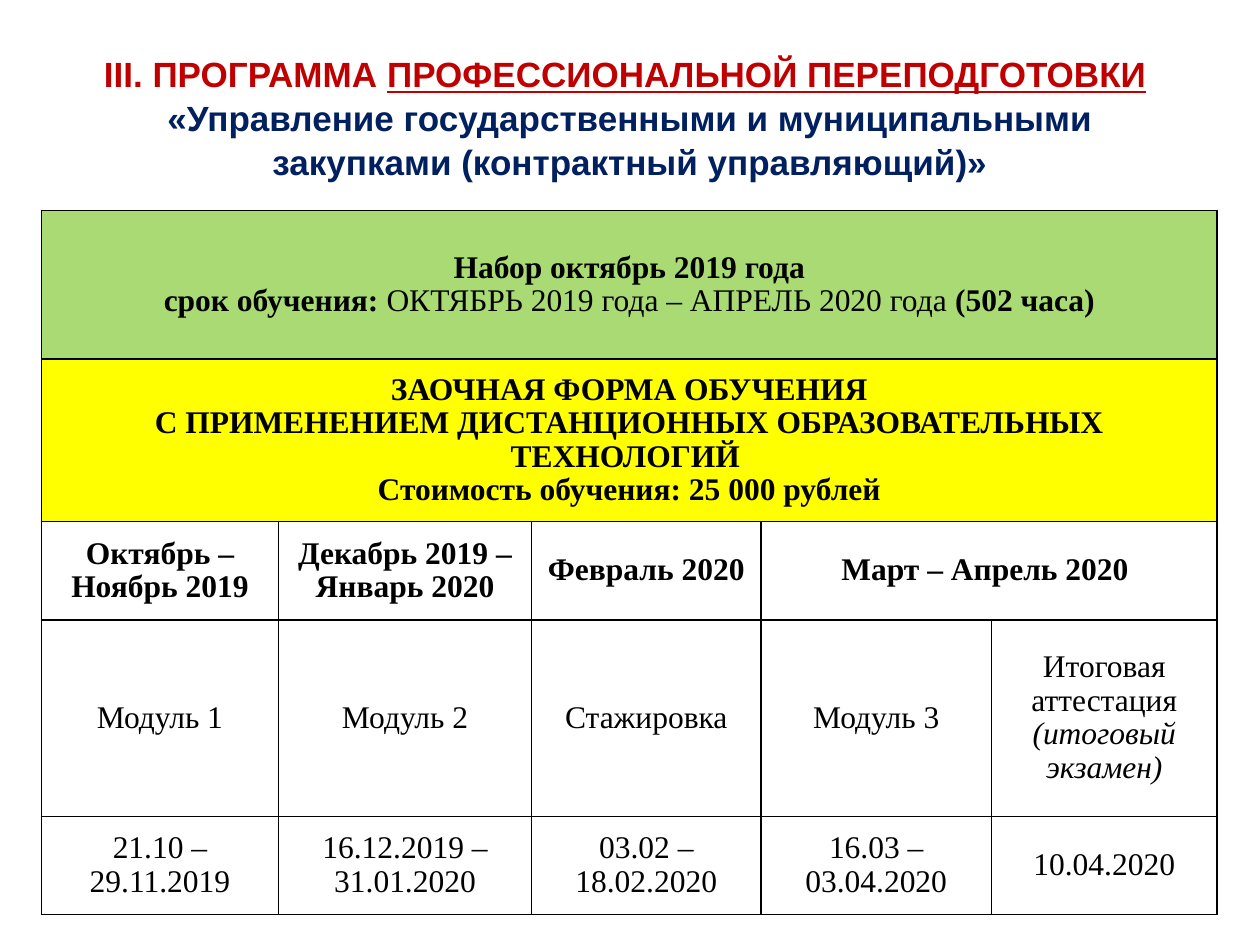
"""Build a slide with the schedule of a professional retraining programme."""
import lxml.etree
import pptx
import pptx.dml.color
import pptx.enum.text
import pptx.oxml.ns
import pptx.util

Inches = pptx.util.Inches
Pt = pptx.util.Pt

THEME = {
    "title": {"name": "Arial", "size": Pt(20), "bold": True},
    "table": {"name": "Times New Roman", "size": Pt(18)},
    "red": "C00000",
    "navy": "002060",
    "black": "000000",
    "green": "A9DA74",
    "yellow": "FFFF00",
    "border": Pt(1),
    "title_spacing": 1.04,
    "table_spacing": 0.96,
}
BOLD = {"bold": True}
PLAIN = {"bold": False}
ITALIC = {"bold": False, "italic": True}

TITLE = [
    ("III. ПРОГРАММА ", "red", {}),
    ("ПРОФЕССИОНАЛЬНОЙ ПЕРЕПОДГОТОВКИ", "red", {"underline": True}),
    (" ", "red", {}),
    None,
    ("«Управление государственными и муниципальными закупками "
     "(контрактный управляющий)»", "navy", {}),
]
INTAKE = [
    [("Набор октябрь 2019 года", BOLD)],
    [("срок обучения: ", BOLD),
     ("ОКТЯБРЬ 2019 года – АПРЕЛЬ 2020 года", PLAIN),
     (" (502 часа)", BOLD)],
]
STUDY_FORM = [
    [("ЗАОЧНАЯ ФОРМА ОБУЧЕНИЯ", BOLD)],
    [("С ПРИМЕНЕНИЕМ ДИСТАНЦИОННЫХ ОБРАЗОВАТЕЛЬНЫХ ТЕХНОЛОГИЙ ", BOLD)],
    [("Стоимость обучения: 25 000 рублей", BOLD)],
]
MONTHS = ["Октябрь – Ноябрь 2019", "Декабрь 2019 – Январь 2020",
          "Февраль 2020", "Март – Апрель 2020 "]
MODULES = ["Модуль 1", "Модуль 2", "Стажировка", "Модуль 3"]
EXAM = [[("Итоговая аттестация", PLAIN)], [("(итоговый экзамен)", ITALIC)]]
DATES = ["21.10 – 29.11.2019", "16.12.2019 – 31.01.2020",
         "03.02 – 18.02.2020", "16.03 – 03.04.2020", "10.04.2020"]


def one_line(texts, style):
    return [[[(text, style)]] for text in texts]


ROWS = [
    (1.18, "green", [INTAKE]),
    (1.29, "yellow", [STUDY_FORM]),
    (0.78, None, one_line(MONTHS, BOLD)),
    (1.56, None, one_line(MODULES, PLAIN) + [EXAM]),
    (0.78, None, one_line(DATES, PLAIN)),
]
COLUMN_WIDTHS = [1.88, 2.01, 1.82, 1.83, 1.79]


def apply(target, values):
    for name, value in values.items():
        setattr(target, name, value)


def color(name):
    return pptx.dml.color.RGBColor.from_string(THEME[name])


def add_run(paragraph, text, color_name, *styles):
    run = paragraph.add_run()
    run.text = text
    run.font.color.rgb = color(color_name)
    for style in styles:
        apply(run.font, style)


def format_paragraph(paragraph, spacing):
    apply(paragraph, {"alignment": pptx.enum.text.PP_ALIGN.CENTER,
                      "line_spacing": THEME[spacing]})


def add_borders(cell):
    qualified = pptx.oxml.ns.qn
    properties = cell._tc.get_or_add_tcPr()
    for side in ("lnL", "lnR", "lnT", "lnB"):
        line = lxml.etree.SubElement(properties, qualified(f"a:{side}"),
                                     w=str(THEME["border"]))
        fill = lxml.etree.SubElement(line, qualified("a:solidFill"))
        lxml.etree.SubElement(fill, qualified("a:srgbClr"), val=THEME["black"])


def add_title(slide):
    shape = slide.shapes.add_textbox(Inches(0.5), Inches(0.3), Inches(9), Inches(1.25))
    apply(shape.text_frame, {"word_wrap": True,
                             "vertical_anchor": pptx.enum.text.MSO_ANCHOR.MIDDLE})
    paragraph = shape.text_frame.paragraphs[0]
    format_paragraph(paragraph, "title_spacing")
    for part in TITLE:
        if part is None:
            paragraph.add_line_break()
        else:
            text, color_name, style = part
            add_run(paragraph, text, color_name, THEME["title"], style)


def fill_cell(cell, paragraphs):
    apply(cell, {"margin_left": Inches(0.07), "margin_right": Inches(0.07),
                 "margin_top": 0, "margin_bottom": 0,
                 "vertical_anchor": pptx.enum.text.MSO_ANCHOR.MIDDLE})
    for index, runs in enumerate(paragraphs):
        frame = cell.text_frame
        paragraph = frame.add_paragraph() if index else frame.paragraphs[0]
        format_paragraph(paragraph, "table_spacing")
        for text, style in runs:
            add_run(paragraph, text, "black", THEME["table"], style)


def add_schedule(slide):
    heights = [height for height, _, _ in ROWS]
    table = slide.shapes.add_table(
        len(ROWS), len(COLUMN_WIDTHS), Inches(0.33), Inches(1.67),
        Inches(sum(COLUMN_WIDTHS)), Inches(sum(heights))).table
    apply(table, {"first_row": False, "horz_banding": False})
    for column, width in zip(table.columns, COLUMN_WIDTHS):
        column.width = Inches(width)
    last = len(COLUMN_WIDTHS) - 1
    for row_index, (height, fill_name, contents) in enumerate(ROWS):
        table.rows[row_index].height = Inches(height)
        for column_index in range(last + 1):
            cell = table.cell(row_index, column_index)
            add_borders(cell)
            if fill_name:
                cell.fill.solid()
                cell.fill.fore_color.rgb = color(fill_name)
            else:
                cell.fill.background()
        if len(contents) <= last:
            table.cell(row_index, len(contents) - 1).merge(table.cell(row_index, last))
        for column_index, paragraphs in enumerate(contents):
            fill_cell(table.cell(row_index, column_index), paragraphs)


def main():
    presentation = pptx.Presentation()
    apply(presentation, {"slide_width": Inches(10), "slide_height": Inches(7.5)})
    slide = presentation.slides.add_slide(presentation.slide_layouts[6])
    add_title(slide)
    add_schedule(slide)
    presentation.save("out.pptx")


if __name__ == "__main__":
    main()
